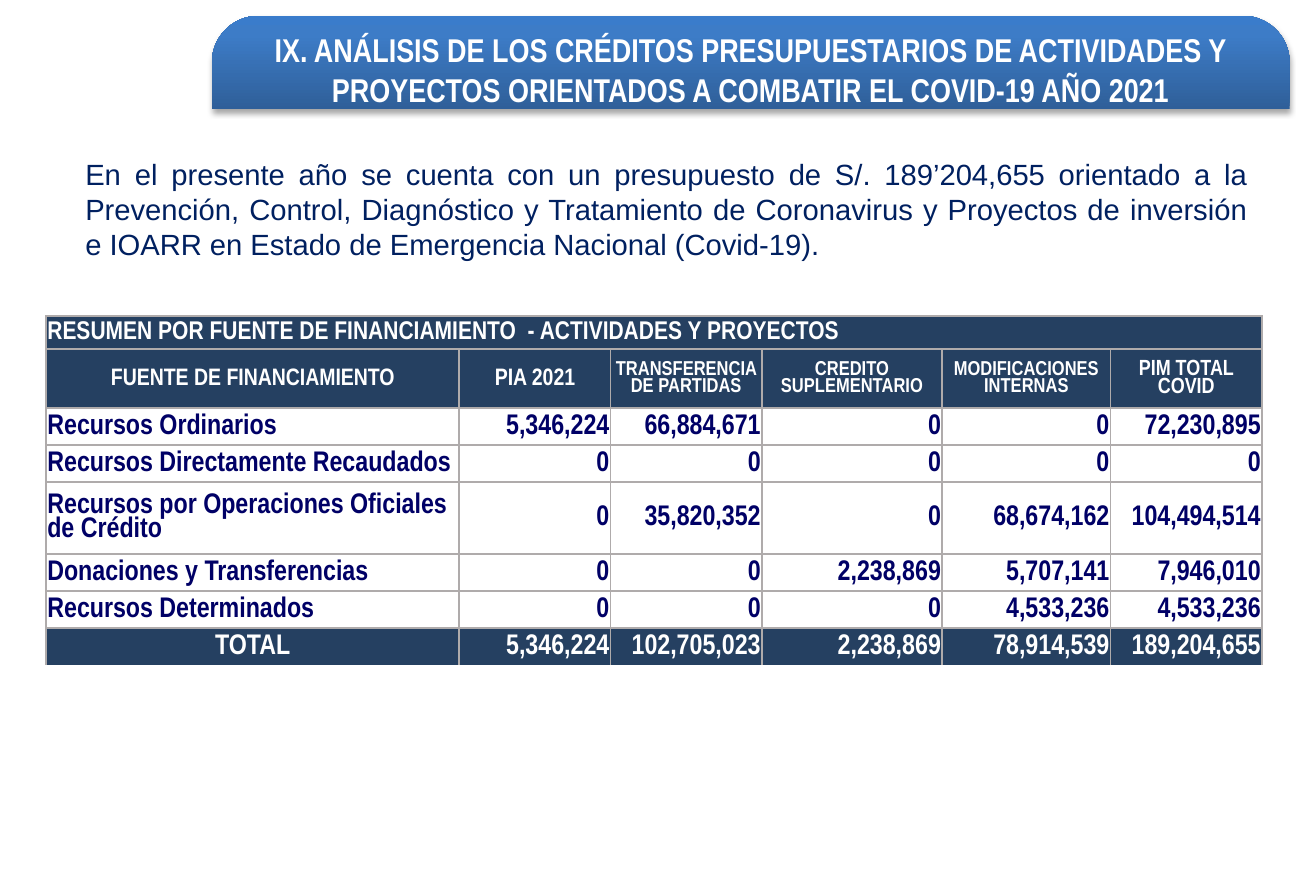
import copy

import pptx
import pptx.dml.color
import pptx.enum.shapes
import pptx.enum.text
import pptx.oxml
import pptx.oxml.ns
import pptx.util
from pptx.util import Inches

COLORS = {
    "white": "FFFFFF",
    "navy": "254061",
    "figures": "000066",
    "intro": "002060",
    "border": "AFABAB",
    "banner_dark": "2F5F99",
    "banner_mid": "3D7CC7",
    "banner_light": "3A7CCB",
    "shadow": "000000",
}
ALIGN = pptx.enum.text.PP_ALIGN
ANCHOR = pptx.enum.text.MSO_ANCHOR
NAMESPACE = pptx.oxml.ns.nsdecls("a")
CENTIMETRES_PER_INCH = 2.54

TITLE = (
    "IX. ANÁLISIS DE LOS CRÉDITOS PRESUPUESTARIOS DE ACTIVIDADES Y "
    "PROYECTOS ORIENTADOS A COMBATIR EL COVID-19 AÑO 2021"
)
INTRO = (
    "En el presente año se cuenta con un presupuesto de S/. 189’204,655 orientado a la "
    "Prevención, Control, Diagnóstico y Tratamiento de Coronavirus y Proyectos de "
    "inversión e IOARR en Estado de Emergencia Nacional (Covid-19)."
)
TABLE_TITLE = "RESUMEN POR FUENTE DE FINANCIAMIENTO  - ACTIVIDADES Y PROYECTOS"
HEADERS = [
    ("FUENTE DE FINANCIAMIENTO", 13),
    ("PIA 2021", 13),
    ("TRANSFERENCIA DE PARTIDAS", 11),
    ("CREDITO SUPLEMENTARIO", 11),
    ("MODIFICACIONES INTERNAS", 11),
    ("PIM TOTAL COVID", 12),
]
SOURCES = [
    ("Recursos Ordinarios", 5346224, 66884671, 0, 0, 72230895),
    ("Recursos Directamente Recaudados", 0, 0, 0, 0, 0),
    ("Recursos por Operaciones Oficiales de Crédito", 0, 35820352, 0, 68674162, 104494514),
    ("Donaciones y Transferencias", 0, 0, 2238869, 5707141, 7946010),
    ("Recursos Determinados", 0, 0, 0, 4533236, 4533236),
]
TOTAL = ("TOTAL", 5346224, 102705023, 2238869, 78914539, 189204655)
COLUMN_WIDTHS = [3.14, 1.15, 1.15, 1.37, 1.28, 1.15]
ROW_HEIGHTS = [0.25, 0.45, 0.28, 0.28, 0.55, 0.28, 0.28, 0.28]


def rgb(name):
    """Return the named colour."""
    return pptx.dml.color.RGBColor.from_string(COLORS[name])


def write_text(text_frame, text, size, color, align, font="Arial Narrow", bold=True, spacing=None):
    """Write one formatted paragraph into a text frame."""
    text_frame.word_wrap = True
    text_frame.text = text
    paragraph = text_frame.paragraphs[0]
    paragraph.alignment = align
    paragraph.line_spacing = spacing
    run_font = paragraph.runs[0].font
    run_font.name = font
    run_font.size = pptx.util.Pt(size)
    run_font.bold = bold
    run_font.color.rgb = rgb(color)


def add_banner(slide, left, top, width, height):
    """Add the title banner with its gradient and soft shadow."""
    shape = slide.shapes.add_shape(
        pptx.enum.shapes.MSO_SHAPE.ROUND_2_SAME_RECTANGLE,
        Inches(left), Inches(top), Inches(width), Inches(height),
    )
    shape.adjustments[0] = 0.5
    shape.adjustments[1] = 0
    shape.line.fill.background()
    shape.fill.gradient()
    shape.fill.gradient_angle = 90
    properties = shape.element.spPr
    stop_list = properties.find(".//" + pptx.oxml.ns.qn("a:gsLst"))
    stop_list.append(copy.deepcopy(stop_list[0]))
    stops = [(0, "banner_dark"), (0.8, "banner_mid"), (1, "banner_light")]
    for stop, (position, color) in zip(shape.fill.gradient_stops, stops):
        stop.position = position
        stop.color.rgb = rgb(color)
    properties.append(pptx.oxml.parse_xml(
        f'<a:effectLst {NAMESPACE}><a:outerShdw blurRad="{pptx.util.Pt(3.1)}" '
        f'dist="{pptx.util.Pt(1.8)}" dir="5400000" rotWithShape="0">'
        f'<a:srgbClr val="{COLORS["shadow"]}"><a:alpha val="35000"/></a:srgbClr>'
        "</a:outerShdw></a:effectLst>"
    ))
    shape.text_frame.vertical_anchor = ANCHOR.MIDDLE
    write_text(shape.text_frame, TITLE, 18, "white", ALIGN.CENTER)


def add_intro(slide, left, top, width, height):
    """Add the justified introductory paragraph."""
    box = slide.shapes.add_textbox(Inches(left), Inches(top), Inches(width), Inches(height))
    write_text(box.text_frame, INTRO, 16, "intro", ALIGN.JUSTIFY, "Arial", False)


def set_borders(cell, sides):
    """Draw thin grey borders on the given sides and none on the others."""
    properties = cell._tc.get_or_add_tcPr()
    for index, side in enumerate("LRTB"):
        paint = "<a:noFill/>"
        if side in sides:
            paint = f'<a:solidFill><a:srgbClr val="{COLORS["border"]}"/></a:solidFill>'
        properties.insert(index, pptx.oxml.parse_xml(
            f'<a:ln{side} {NAMESPACE} w="{pptx.util.Pt(1)}">{paint}</a:ln{side}>'
        ))


def fill_cell(cell, text, size, align, dark, sides="LRTB"):
    """Write and format one table cell."""
    cell.margin_left = cell.margin_right = cell.margin_top = Inches(0.01)
    cell.margin_bottom = 0
    cell.vertical_anchor = ANCHOR.MIDDLE
    if dark:
        cell.fill.solid()
        cell.fill.fore_color.rgb = rgb("navy")
    else:
        cell.fill.background()
    write_text(cell.text_frame, text, size, "white" if dark else "figures", align, spacing=0.9)
    set_borders(cell, sides)


def fill_amounts(table, row, record, label_align, dark, sides="LRTB"):
    """Fill a table row with a label and its amounts."""
    label, *amounts = record
    fill_cell(table.cell(row, 0), label, 15.5, label_align, dark, sides)
    for column, amount in enumerate(amounts, start=1):
        fill_cell(table.cell(row, column), f"{amount:,}", 15.5, ALIGN.RIGHT, dark, sides)


def add_funding_table(slide, left, top, width, height):
    """Add the summary table by funding source."""
    table = slide.shapes.add_table(
        len(ROW_HEIGHTS), len(COLUMN_WIDTHS),
        Inches(left), Inches(top), Inches(width), Inches(height),
    ).table
    table.horz_banding = False
    for column, column_width in zip(table.columns, COLUMN_WIDTHS):
        column.width = Inches(column_width)
    for row, row_height in zip(table.rows, ROW_HEIGHTS):
        row.height = Inches(row_height)
    fill_cell(table.cell(0, 0), TABLE_TITLE, 14, ALIGN.LEFT, True)
    for column in range(1, len(COLUMN_WIDTHS)):
        set_borders(table.cell(0, column), "LRTB")
    table.cell(0, 0).merge(table.cell(0, len(COLUMN_WIDTHS) - 1))
    for column, (header, size) in enumerate(HEADERS):
        fill_cell(table.cell(1, column), header, size, ALIGN.CENTER, True)
    for row, record in enumerate(SOURCES, start=2):
        fill_amounts(table, row, record, ALIGN.LEFT, False)
    fill_amounts(table, len(ROW_HEIGHTS) - 1, TOTAL, ALIGN.CENTER, True, "LRT")


def main():
    """Build the slide and save the presentation."""
    presentation = pptx.Presentation()
    presentation.slide_width = Inches(10)
    presentation.slide_height = Inches(17 / CENTIMETRES_PER_INCH)
    slide = presentation.slides.add_slide(presentation.slide_layouts[6])
    add_banner(slide, 1.61, 0.12, 8.19, 0.71)
    add_funding_table(slide, 0.35, 2.4, sum(COLUMN_WIDTHS), sum(ROW_HEIGHTS))
    add_intro(slide, 0.55, 1.14, 9.03, 1.18)
    presentation.save("out.pptx")


if __name__ == "__main__":
    main()
